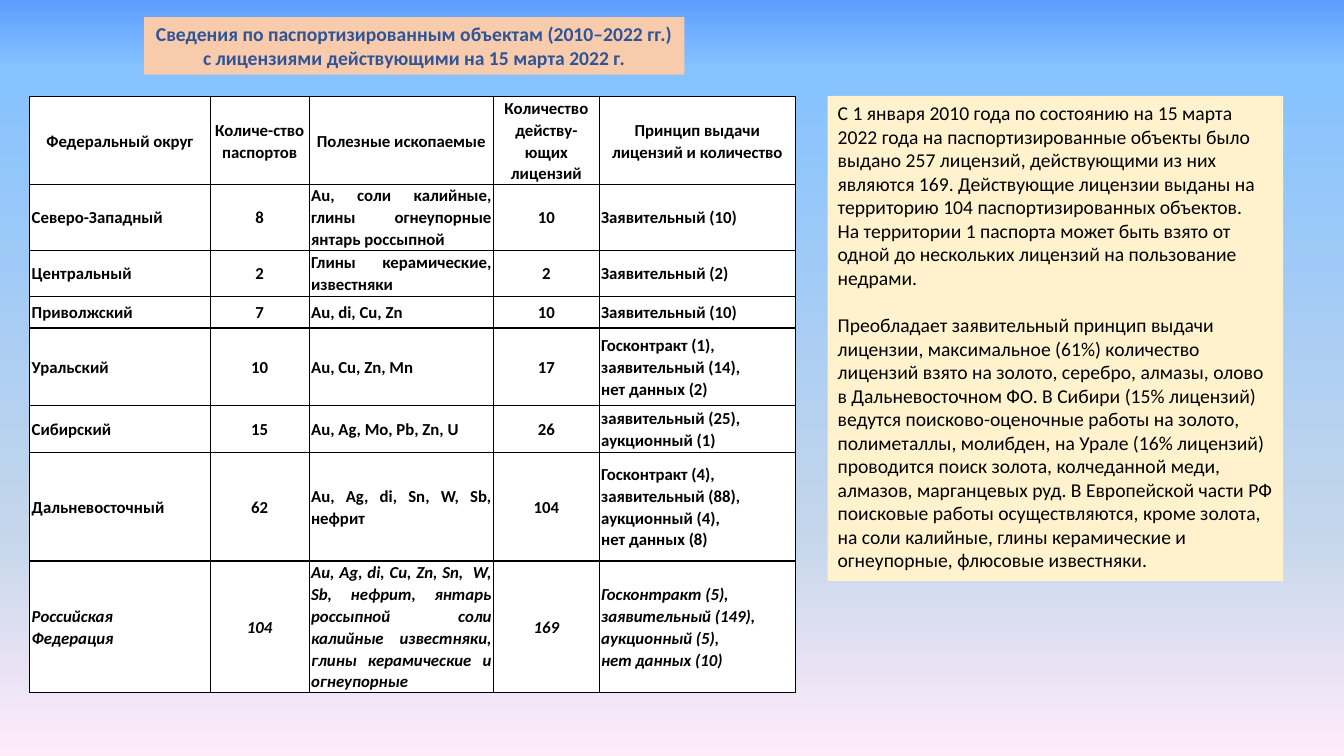
import copy
from dataclasses import dataclass

import lxml.etree
import pptx
import pptx.dml.color
import pptx.enum.shapes
import pptx.enum.text
import pptx.oxml
import pptx.oxml.ns
import pptx.util

Cm = pptx.util.Cm
Pt = pptx.util.Pt
RGB = pptx.dml.color.RGBColor
Align = pptx.enum.text.PP_ALIGN
Anchor = pptx.enum.text.MSO_ANCHOR
qn = pptx.oxml.ns.qn

BLACK = RGB(0x00, 0x00, 0x00)
WHITE = RGB(0xFF, 0xFF, 0xFF)
BLUE = RGB(0x2F, 0x55, 0x97)
PEACH = RGB(0xF8, 0xCB, 0xAD)
CREAM = RGB(0xFF, 0xF2, 0xCC)
SKY = [
    (0, RGB(0x5E, 0x9E, 0xFF)),
    (9, RGB(0x85, 0xC2, 0xFF)),
    (70, RGB(0xC4, 0xD6, 0xEB)),
    (100, RGB(0xFF, 0xEB, 0xFA)),
]
FONT = "Calibri"


@dataclass
class Panel:
    left: float
    top: float
    width: float
    height: float
    fill: RGB
    color: RGB
    bold: bool
    align: Align
    texts: list[str]
    gaps: list[int]


@dataclass
class Region:
    name: str
    count: str
    ores: str
    active: str
    basis: str
    height: float
    italic: bool = False

    def texts(self) -> list[str]:
        return [self.name, self.count, self.ores, self.active, self.basis]


HEAD = Region("Федеральный округ", "Количе-ство паспортов", "Полезные ископаемые",
              "Количество действу-ющих лицензий",
              "Принцип выдачи лицензий и количество", 1.78)
REGIONS = [
    Region("Северо-Западный", "8",
           "Au, соли калийные, глины огнеупорные янтарь россыпной",
           "10", "Заявительный (10)", 1.6),
    Region("Центральный", "2", "Глины керамические, известняки",
           "2", "Заявительный (2)", 1.17),
    Region("Приволжский", "7", "Au, di, Cu, Zn", "10", "Заявительный (10)", 0.79),
    Region("Уральский", "10", "Au, Cu, Zn, Mn", "17",
           "Госконтракт (1),\nзаявительный (14),\nнет данных (2)", 1.96),
    Region("Сибирский", "15", "Au, Ag, Mo, Pb, Zn, U", "26",
           "заявительный (25), аукционный (1)", 1.17),
    Region("Дальневосточный", "62", "Au, Ag, di, Sn, W, Sb, нефрит", "104",
           "Госконтракт (4),\nзаявительный (88), аукционный (4),\nнет данных (8)", 2.74),
    Region("Российская\nФедерация", "104",
           "Au, Ag, di, Cu, Zn, Sn,  W, Sb, нефрит, янтарь россыпной соли калийные "
           "известняки, глины керамические и огнеупорные", "169",
           "Госконтракт (5), заявительный (149), аукционный (5),\nнет данных (10)",
           3.12, True),
]
WIDTHS = [4.55, 2.49, 4.65, 2.66, 4.95]
ALIGNS = [Align.LEFT, Align.CENTER, Align.JUSTIFY, Align.CENTER, Align.LEFT]

PANELS = [
    Panel(3.63, 0.43, 13.62, 1.45, PEACH, BLUE, True, Align.CENTER, [
        "Сведения по паспортизированным объектам (2010–2022 гг.) "
        "с лицензиями действующими на 15 марта 2022 г."], [0]),
    Panel(20.86, 2.42, 11.48, 12.22, CREAM, BLACK, False, Align.LEFT, [
        "С 1 января 2010 года по состоянию на 15 марта 2022 года на паспортизированные "
        "объекты было выдано 257 лицензий, действующими из них являются 169. Действующие "
        "лицензии выданы на территорию 104 паспортизированных объектов.",
        "На территории 1 паспорта может быть взято от одной до нескольких лицензий "
        "на пользование недрами.",
        "Преобладает заявительный принцип выдачи лицензии, максимальное (61%) количество "
        "лицензий взято на золото, серебро, алмазы, олово в Дальневосточном ФО. В Сибири "
        "(15% лицензий) ведутся поисково-оценочные работы на золото, полиметаллы, молибден, "
        "на Урале (16% лицензий) проводится поиск золота, колчеданной меди, алмазов, "
        "марганцевых руд. В Европейской части РФ поисковые работы осуществляются, кроме "
        "золота, на соли калийные, глины керамические и огнеупорные, флюсовые известняки.",
    ], [0, 0, 17]),
]


def style(para, size: int, color: RGB, bold: bool, italic: bool = False) -> None:
    for run in para.runs:
        font = run.font
        font.name, font.size = FONT, Pt(size)
        font.bold, font.italic = bold, italic
        font.color.rgb = color
    # Line breaks take the size of the text around them
    for br in para._p.findall(qn("a:br")):
        br.insert(0, copy.deepcopy(para.runs[0]._r.rPr))


def edge(cell) -> None:
    props = cell._tc.get_or_add_tcPr()
    for spot, side in enumerate(("lnL", "lnR", "lnT", "lnB")):
        line = pptx.oxml.parse_xml(
            f'<a:{side} {pptx.oxml.ns.nsdecls("a")} w="12700"><a:solidFill>'
            f'<a:srgbClr val="{BLACK}"/></a:solidFill></a:{side}>')
        props.insert(spot, line)


def paint(slide) -> None:
    fill = slide.background.fill
    fill.gradient()
    fill.gradient_angle = 270
    stops = slide._element.find(".//" + qn("a:gsLst"))
    for stop in list(stops):
        stops.remove(stop)
    for place, color in SKY:
        stop = lxml.etree.SubElement(stops, qn("a:gs"), pos=str(place * 1000))
        lxml.etree.SubElement(stop, qn("a:srgbClr"), val=str(color))


def tabulate(slide) -> None:
    rows = [HEAD, *REGIONS]
    frame = slide.shapes.add_table(
        len(rows), len(WIDTHS), Cm(0.75), Cm(2.44),
        Cm(sum(WIDTHS)), Cm(sum(row.height for row in rows)))
    table = frame.table
    table.first_row = table.horz_banding = False
    for col, width in zip(table.columns, WIDTHS):
        col.width = Cm(width)
    for line, row in zip(table.rows, rows):
        line.height = Cm(row.height)
        for cell, text, align in zip(line.cells, row.texts(), ALIGNS):
            cell.fill.solid()
            cell.fill.fore_color.rgb = WHITE
            cell.vertical_anchor = Anchor.MIDDLE
            cell.margin_left = cell.margin_right = Cm(0.05)
            cell.margin_top = cell.margin_bottom = 0
            edge(cell)
            para = cell.text_frame.paragraphs[0]
            para.text = text
            para.alignment = Align.CENTER if row is HEAD else align
            para.line_spacing = 1.07
            style(para, 12, BLACK, True, row.italic)


def place(slide, panel: Panel) -> None:
    box = slide.shapes.add_shape(
        pptx.enum.shapes.MSO_SHAPE.RECTANGLE, Cm(panel.left), Cm(panel.top),
        Cm(panel.width), Cm(panel.height))
    box.shadow.inherit = False
    box.fill.solid()
    box.fill.fore_color.rgb = panel.fill
    box.line.fill.background()
    frame = box.text_frame
    frame.word_wrap = True
    frame.auto_size = pptx.enum.text.MSO_AUTO_SIZE.SHAPE_TO_FIT_TEXT
    frame.vertical_anchor = Anchor.TOP
    frame.text = "\n".join(panel.texts)
    for para, gap in zip(frame.paragraphs, panel.gaps):
        para.alignment = panel.align
        para.space_before = Pt(gap)
        style(para, 14, panel.color, panel.bold)


def main() -> None:
    deck = pptx.Presentation()
    deck.slide_width, deck.slide_height = Cm(33.87), Cm(19.05)
    slide = deck.slides.add_slide(deck.slide_layouts[6])
    # Background
    paint(slide)
    # Licence table
    tabulate(slide)
    # Title and commentary
    for panel in PANELS:
        place(slide, panel)
    deck.save("out.pptx")


if __name__ == "__main__":
    main()
